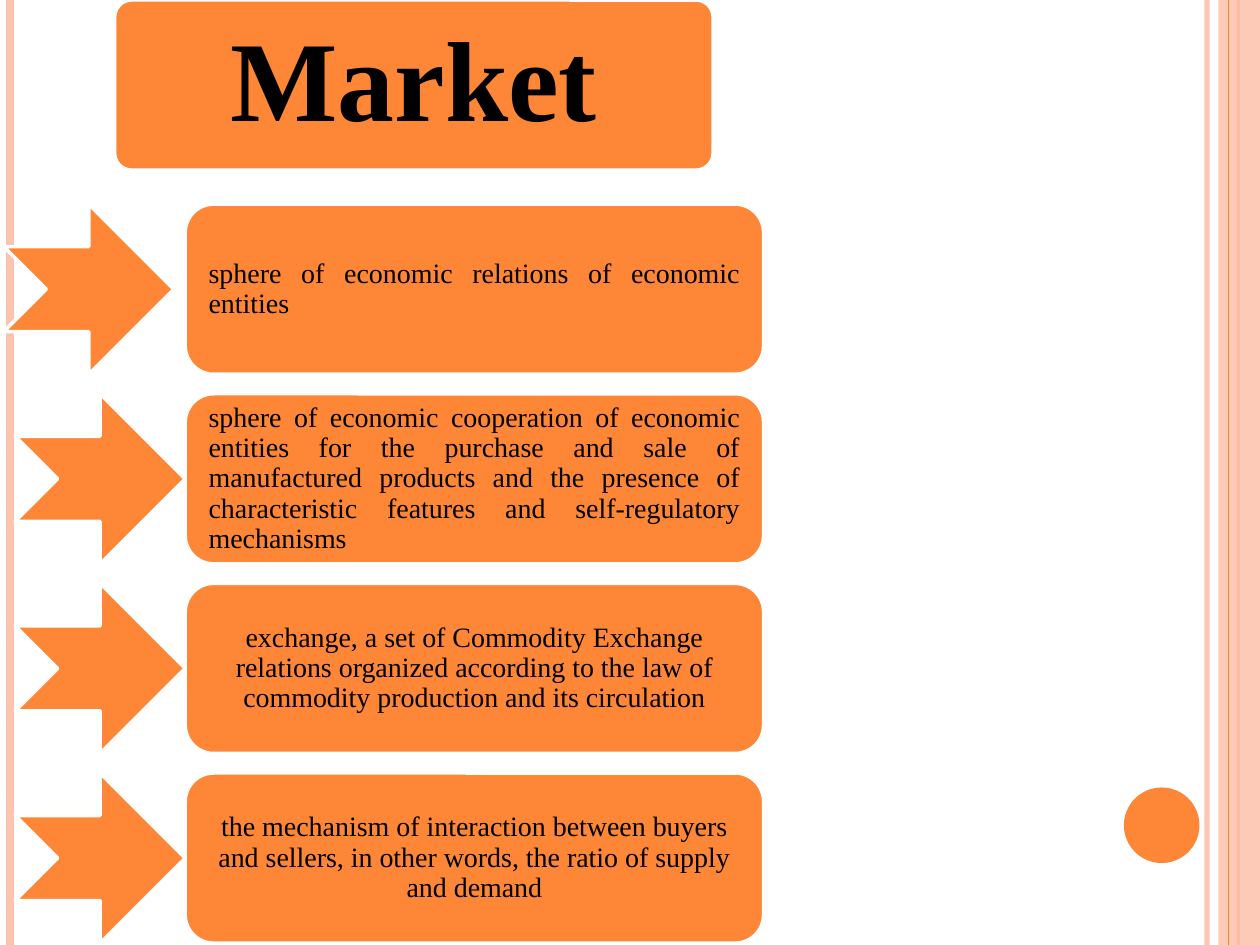
from dataclasses import dataclass

from lxml import etree
from pptx import Presentation
from pptx.dml.color import RGBColor
from pptx.enum.shapes import MSO_CONNECTOR, MSO_SHAPE
from pptx.enum.text import MSO_ANCHOR, PP_ALIGN
from pptx.oxml.ns import qn
from pptx.util import Inches, Pt

RECT, OVAL = MSO_SHAPE.RECTANGLE, MSO_SHAPE.OVAL
ROUND, ARROW = MSO_SHAPE.ROUNDED_RECTANGLE, MSO_SHAPE.NOTCHED_RIGHT_ARROW
STRAIGHT = MSO_CONNECTOR.STRAIGHT
CENTER, JUSTIFY = PP_ALIGN.CENTER, PP_ALIGN.JUSTIFY
MIDDLE = MSO_ANCHOR.MIDDLE


@dataclass(frozen=True)
class Theme:
    orange = RGBColor(0xFE, 0x86, 0x37)
    pink = RGBColor(0xFE, 0xC3, 0xAE)
    white = RGBColor(0xFF, 0xFF, 0xFF)
    black = RGBColor(0, 0, 0)
    font = "Times New Roman"
    title = Pt(65)
    body = Pt(16)
    outline = Pt(2)


theme = Theme()
prs = Presentation()
prs.slide_width, prs.slide_height = Inches(10), Inches(7.5)
s = prs.slides.add_slide(prs.slide_layouts[6])


def add_block(kind, x, y, w, h, color, outlined=True):
    sp = s.shapes.add_shape(kind, Inches(x), Inches(y), Inches(w), Inches(h))
    sp.shadow.inherit = False
    sp.fill.solid()
    sp.fill.fore_color.rgb = color
    if outlined:
        sp.line.color.rgb = theme.white
        sp.line.width = theme.outline
    else:
        sp.line.fill.background()
    return sp


def write(sp, text, size, align, inset_x, inset_y, bold=False):
    tf = sp.text_frame
    frame_format = {
        "word_wrap": True, "vertical_anchor": MIDDLE,
        "margin_left": Inches(inset_x), "margin_right": Inches(inset_x),
        "margin_top": Inches(inset_y), "margin_bottom": Inches(inset_y),
    }
    for name, value in frame_format.items():
        setattr(tf, name, value)
    p = tf.paragraphs[0]
    p.alignment, p.line_spacing = align, 0.9
    r = p.add_run()
    r.text = text
    for name, value in {"name": theme.font, "size": size, "bold": bold}.items():
        setattr(r.font, name, value)
    r.font.color.rgb = theme.black


# Side decoration: the band lies between the stripes in the stacking order
stripes = [
    (9.58, theme.pink, 3),
    (0.08, theme.pink, 4.5),
    (9.83, theme.orange, 1.5),
    (9.75, theme.orange, 0.75),
]
translucent = []
for x, color, width in stripes:
    if x == 9.75:
        band = add_block(RECT, 9.67, 0, 0.33, 7.5, theme.pink, outlined=False)
        translucent.append((band, 87))
    stripe = s.shapes.add_connector(STRAIGHT, Inches(x), 0, Inches(x), Inches(7.5))
    stripe.line.color.rgb = color
    stripe.line.width = Pt(width)
    etree.SubElement(stripe._element.spPr, qn("a:effectLst"))
    if x == 9.58:
        translucent.append((stripe, 93))
for sp, percent in translucent:
    clr = next(sp._element.spPr.iter(qn("a:srgbClr")))
    etree.SubElement(clr, qn("a:alpha"), val=str(percent * 1000))
add_block(OVAL, 8.92, 6.25, 0.6, 0.6, theme.orange, outlined=False)

# Heading
heading = add_block(ROUND, 0.91, 0, 4.75, 1.35, theme.orange)
heading.adjustments[0] = 0.1
write(heading, "Market", theme.title, CENTER, 0.14, 0.09, bold=True)

# Definitions, each with its arrow
definitions = [
    (0.03, JUSTIFY, "sphere of economic relations of economic entities"),
    (0.12, JUSTIFY, "sphere of economic cooperation of economic entities for the "
     "purchase and sale of manufactured products and the presence of "
     "characteristic features and self-regulatory mechanisms"),
    (0.12, CENTER, "exchange, a set of Commodity Exchange relations organized "
     "according to the law of commodity production and its circulation"),
    (0.12, CENTER, "the mechanism of interaction between buyers and sellers, "
     "in other words, the ratio of supply and demand"),
]
FIRST_TOP, PITCH, HEIGHT = 1.62, 1.505, 1.35
for i, (arrow_left, align, text) in enumerate(definitions):
    top = FIRST_TOP + i * PITCH
    add_block(ARROW, arrow_left, top, HEIGHT, HEIGHT, theme.orange)
    box = add_block(ROUND, 1.47, top, 4.59, HEIGHT, theme.orange)
    write(box, text, theme.body, align, 0.12, 0.12)

prs.save("out.pptx")
